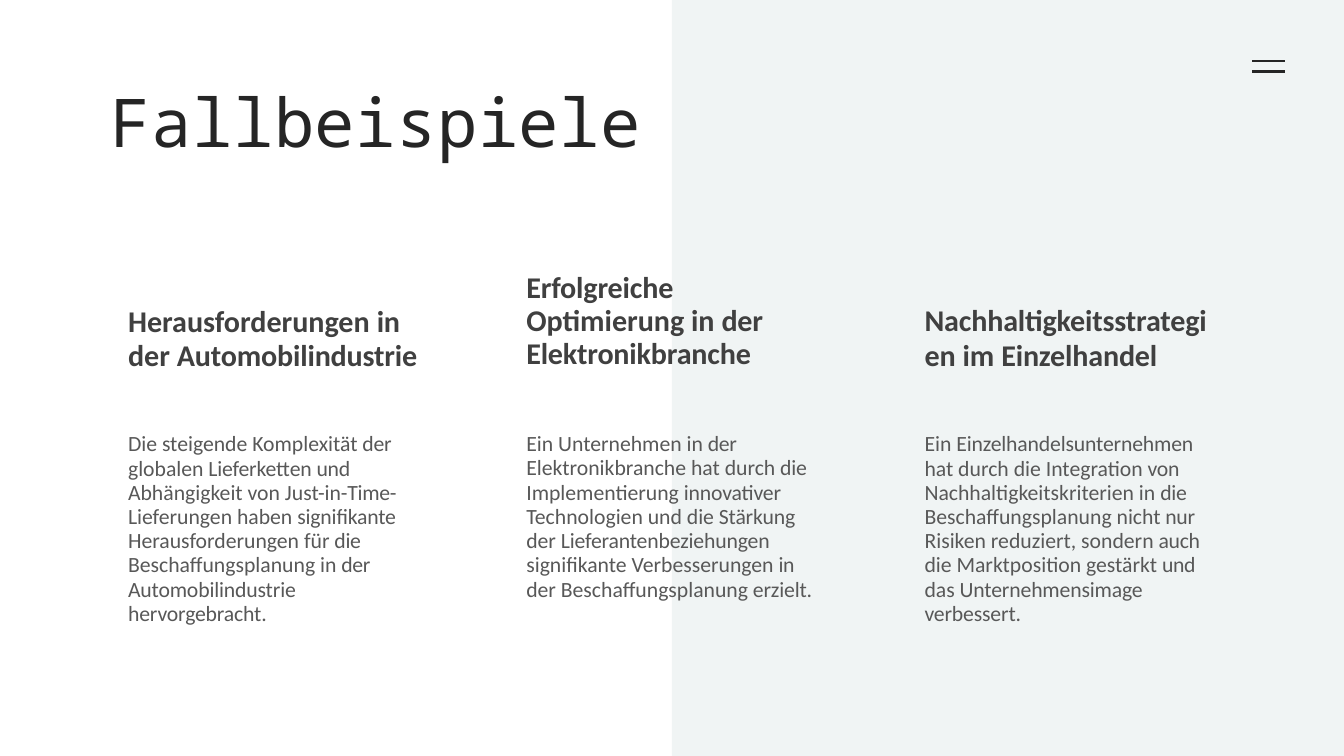
import pptx
import pptx.util
import pptx.dml.color
import pptx.enum.shapes
import pptx.enum.text
from dataclasses import dataclass

Inches, Pt = pptx.util.Inches, pptx.util.Pt
RGB = pptx.dml.color.RGBColor.from_string
TextEnum = pptx.enum.text

WIDE, HIGH = 13.33, 7.5
LEFT, STEP = 1.25, 3.95    # first column and column pitch
BODY_TOP = 4.25


@dataclass(frozen=True)
class Theme:
    panel: str = "F0F4F4"
    ink: str = "252525"
    head: str = "404040"
    body: str = "585858"
    title_size: float = 48
    head_size: float = 21.5
    body_size: float = 15.5
    title_font: str = "Noto Sans Mono"
    text_font: str = "Calibri"


THEME = Theme()
TITLE = {"name": THEME.title_font, "size": Pt(THEME.title_size), "bold": False}
HEAD = {"name": THEME.text_font, "size": Pt(THEME.head_size), "bold": True}
BODY = {"name": THEME.text_font, "size": Pt(THEME.body_size), "bold": False}

# Tracking marks that open a run, in hundredths of a point
TRACK = {"=": 0, "~": -10, "^": -20, "+": 40}

# Heading text, box (top, width, height), line spacing, space before, top inset;
# then body text and its box width and height
CASES = [
    ("=Herausforderungen |^in |=der |~Automobilindustrie",
     (2.98, 3.02, 0.72), Pt(24), 3.5, 0.05,
     "=Die steigende Komplexität |^der |=globalen |~Lieferketten |^und |"
     "=Abhängigkeit von Just-|~in-|^Time- |=Lieferungen haben |~signifikante |"
     "=Herausforderungen für |^die |=Beschaffungsplanung in |^der |"
     "~Automobilindustrie hervorgebracht.",
     (2.78, 1.98)),
    ("~Erfolgreiche |=Optimierung in |^der |~Elektronikbranche",
     (2.65, 2.44, 1.05), 0.91, 3.4, 0.05,
     "=Ein Unternehmen in |^der |=Elektronikbranche hat durch |^die |"
     "=Implementierung |~innovativer |=Technologien und die |~Stärkung |=der |"
     "~Lieferantenbeziehungen |=signifikante Verbesserungen |^in |"
     "=der Beschaffungsplanung |~erzielt.",
     (2.95, 1.74)),
    ("~Nachhaltigkeitsstrategi\n=en im |~Einzelhandel",
     (2.98, 2.91, 0.73), Pt(24.9), 1.3, 0.02,
     "=Ein |~Einzelhandelsunternehmen |=hat durch die Integration |^von |"
     "=Nachhaltigkeitskriterien in |^die |=Beschaffungsplanung nicht |^nur |"
     "=Risiken reduziert, sondern |^auch |=die Marktposition gestärkt |^und |"
     "=das |~Unternehmensimage verbessert.",
     (2.86, 1.98)),
]


def apply(item, values):
    for key, value in values.items():
        setattr(item, key, value)


def write(shape, text, font, color, inset, spacing, before):
    """Fill a shape with left-aligned, tracked runs; inset is (left, top)."""
    frame = shape.text_frame
    apply(frame, {
        "word_wrap": True,
        "vertical_anchor": TextEnum.MSO_ANCHOR.TOP,
        "auto_size": TextEnum.MSO_AUTO_SIZE.NONE,
        "margin_left": Inches(inset[0]), "margin_top": Inches(inset[1]),
        "margin_right": 0, "margin_bottom": 0,
    })
    for row, line in enumerate(text.split("\n")):
        para = frame.add_paragraph() if row else frame.paragraphs[0]
        apply(para, {
            "alignment": TextEnum.PP_ALIGN.LEFT,
            "line_spacing": spacing,
            "space_before": Pt(0 if row else before),
        })
        for part in line.split("|"):
            run = para.add_run()
            run.text = part[1:]
            apply(run.font, font)
            run.font.color.rgb = RGB(color)
            run._r.get_or_add_rPr().set("spc", str(TRACK[part[0]]))


def draw_panel(slide, box):
    """Tinted half of the slide."""
    panel = slide.shapes.add_shape(
        pptx.enum.shapes.MSO_SHAPE.RECTANGLE, *map(Inches, box))
    panel.shadow.inherit = False
    panel.fill.solid()
    panel.fill.fore_color.rgb = RGB(THEME.panel)
    panel.line.fill.background()


def draw_menu(slide, box):
    """Menu icon: one outline with a rule at the top and bottom of the box."""
    left, top, wide, high = map(Inches, box)
    pen = slide.shapes.build_freeform(left, top)
    pen.add_line_segments([(left + wide, top)], close=False)
    pen.move_to(left, top + high)
    pen.add_line_segments([(left + wide, top + high)], close=False)
    menu = pen.convert_to_shape()
    menu.shadow.inherit = False
    menu.fill.background()
    menu.line.color.rgb = RGB(THEME.ink)
    menu.line.width = Pt(1.5)


def draw_title(slide, box, text):
    title = slide.shapes.title
    apply(title, dict(zip(("left", "top", "width", "height"), map(Inches, box))))
    write(title, text, TITLE, THEME.ink, (0.1, 0.45), 1.0, 1.1)


def draw_case(slide, left, case):
    """One column: heading above, body text below."""
    head, (top, wide, high), spacing, before, inset, body, size = case
    label = slide.shapes.add_textbox(*map(Inches, (left, top, wide, high)))
    write(label, head, HEAD, THEME.head, (0.02, inset), spacing, before)
    block = slide.shapes.add_textbox(*map(Inches, (left, BODY_TOP, *size)))
    write(block, body, BODY, THEME.body, (0.02, 0.04), 0.93, 2.5)


def main():
    deck = pptx.Presentation()
    deck.slide_width, deck.slide_height = Inches(WIDE), Inches(HIGH)
    slide = deck.slides.add_slide(deck.slide_layouts[5])

    # Backdrop
    draw_panel(slide, (WIDE / 2, 0, WIDE / 2, HIGH))
    draw_menu(slide, (12.42, 0.61, 0.33, 0.1))

    # Title, raised above the panel
    draw_title(slide, (1, 0.35, 9.76, 1.98), "+Fallbeispiele")
    title = slide.shapes.title._element
    title.getparent().append(title)

    # Three cases
    for col, case in enumerate(CASES):
        draw_case(slide, LEFT + col * STEP, case)

    deck.save("out.pptx")


if __name__ == "__main__":
    main()
